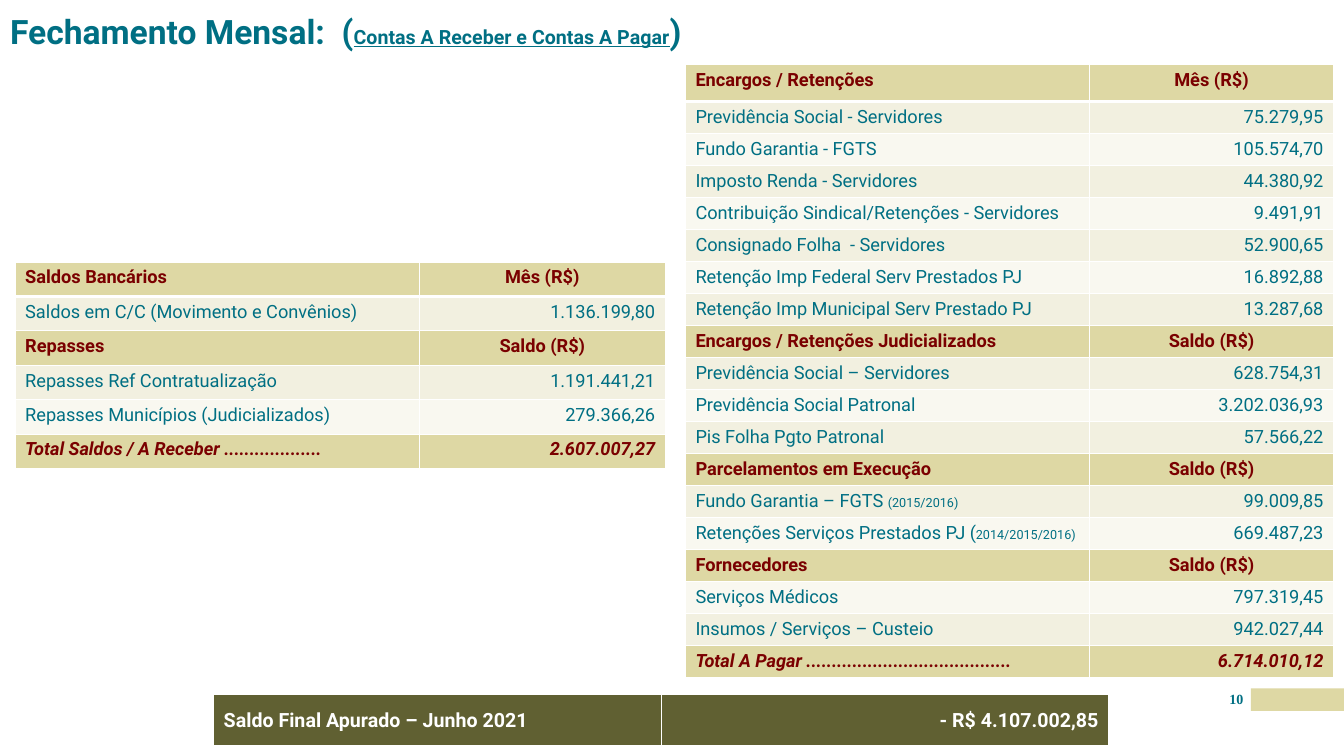
from lxml import etree
from pptx import Presentation
from pptx.dml.color import RGBColor
from pptx.enum.shapes import MSO_SHAPE
from pptx.enum.text import MSO_ANCHOR, PP_ALIGN
from pptx.oxml.ns import qn
from pptx.util import Pt

RECT = MSO_SHAPE.RECTANGLE
TOP, MIDDLE = MSO_ANCHOR.TOP, MSO_ANCHOR.MIDDLE
LEFT, CENTER, RIGHT = PP_ALIGN.LEFT, PP_ALIGN.CENTER, PP_ALIGN.RIGHT

COLORS = {
    "teal": "006F83", "maroon": "7A0000", "white": "FFFFFF", "sand": "DED8A4",
    "odd": "F2F0E0", "even": "F9F8F0", "olive": "606032",
}

RECEIVABLE = [
    ("head", "Saldos Bancários", "Mês (R$)"),
    ("item", "Saldos em C/C (Movimento e Convênios)", "1.136.199,80"),
    ("head", "Repasses", "Saldo (R$)"),
    ("item", "Repasses Ref Contratualização", "1.191.441,21"),
    ("item", "Repasses Municípios (Judicializados)", "279.366,26"),
    ("total", "Total Saldos / A Receber ...................", "2.607.007,27"),
]
PAYABLE = [
    ("head", "Encargos / Retenções", "Mês (R$)"),
    ("item", "Previdência Social - Servidores", "75.279,95"),
    ("item", "Fundo Garantia - FGTS", "105.574,70"),
    ("item", "Imposto Renda - Servidores", "44.380,92"),
    ("item", "Contribuição Sindical/Retenções - Servidores", "9.491,91"),
    ("item", "Consignado Folha  - Servidores", "52.900,65"),
    ("item", "Retenção Imp Federal Serv Prestados PJ", "16.892,88"),
    ("item", "Retenção Imp Municipal Serv Prestado PJ", "13.287,68"),
    ("head", "Encargos / Retenções Judicializados", "Saldo (R$)"),
    ("item", "Previdência Social – Servidores", "628.754,31"),
    ("item", "Previdência Social Patronal", "3.202.036,93"),
    ("item", "Pis Folha Pgto Patronal", "57.566,22"),
    ("head", "Parcelamentos em Execução", "Saldo (R$)"),
    ("item", ("Fundo Garantia – FGTS ", "(2015/2016)"), "99.009,85"),
    ("item", ("Retenções Serviços Prestados PJ (", "2014/2015/2016)"), "669.487,23"),
    ("head", "Fornecedores", "Saldo (R$)"),
    ("item", "Serviços Médicos", "797.319,45"),
    ("item", "Insumos / Serviços – Custeio", "942.027,44"),
    ("total", "Total A Pagar ........................................", "6.714.010,12"),
]
BALANCE = [("final", "Saldo Final Apurado – Junho 2021", "- R$ 4.107.002,85")]

STYLES = {
    "head": dict(color="maroon", bold=True),
    "item": dict(color="teal"),
    "total": dict(color="maroon", bold=True, italic=True),
    "final": dict(color="white", bold=True, size=14),
}
FILLS = {"head": "sand", "total": "sand", "final": "olive"}


def rgb(name):
    return RGBColor.from_string(COLORS[name])


def add_text(p, text, size=13, font="Roboto", color="teal", bold=False,
             italic=False, underline=False):
    r = p.add_run()
    r.text = text
    f = r.font
    f.size, f.name, f.bold, f.italic, f.underline = Pt(size), font, bold, italic, underline
    f.color.rgb = rgb(color)


def add_box(s, x, y, w, h):
    tf = s.shapes.add_textbox(Pt(x), Pt(y), Pt(w), Pt(h)).text_frame
    tf.word_wrap = True
    tf.margin_left = tf.margin_top = tf.margin_right = tf.margin_bottom = 0
    return tf.paragraphs[0]


def set_borders(cell, bottom):
    tcPr = cell._tc.get_or_add_tcPr()
    widths = {"a:lnL": 1, "a:lnR": 1, "a:lnT": 1, "a:lnB": bottom}
    for i, (tag, width) in enumerate(widths.items()):
        ln = etree.Element(qn(tag), w=str(Pt(width)))
        fill = etree.SubElement(ln, qn("a:solidFill"))
        etree.SubElement(fill, qn("a:srgbClr"), val=COLORS["white"])
        tcPr.insert(i, ln)


def add_ledger(s, x, y, widths, heights, rows, anchor=TOP):
    frame = s.shapes.add_table(len(rows), 2, Pt(x), Pt(y), Pt(sum(widths)), Pt(sum(heights)))
    table = frame.table
    for column, width in zip(table.columns, widths):
        column.width = Pt(width)
    for i, (kind, label, value) in enumerate(rows):
        table.rows[i].height = Pt(heights[i])
        fill = FILLS.get(kind, "odd" if i % 2 else "even")
        value_align = CENTER if kind == "head" else RIGHT
        for j, (content, align) in enumerate([(label, LEFT), (value, value_align)]):
            cell = table.cell(i, j)
            cell.fill.solid()
            cell.fill.fore_color.rgb = rgb(fill)
            cell.vertical_anchor = anchor
            set_borders(cell, 1 if i else 3)
            p = cell.text_frame.paragraphs[0]
            p.alignment = align
            main, note = (content, "") if isinstance(content, str) else content
            add_text(p, main, **STYLES[kind])
            if note:
                add_text(p, note, size=9)


def add_title(s, x, y, w, h):
    p = add_box(s, x, y, w, h)
    p.line_spacing = 0.9
    add_text(p, "Fechamento Mensal:  (", size=24, bold=True)
    add_text(p, "Contas A Receber e Contas A Pagar", size=14, bold=True, underline=True)
    add_text(p, ")", size=24, bold=True)


def add_page_mark(s, x, y, w, h):
    number_width = 21
    sp = s.shapes.add_shape(RECT, Pt(x + number_width), Pt(y), Pt(w - number_width), Pt(h))
    sp.shadow.inherit = False
    sp.fill.solid()
    sp.fill.fore_color.rgb = rgb("sand")
    sp.line.fill.background()
    p = add_box(s, x, y + 1.5, number_width, 18)
    p.alignment = CENTER
    add_text(p, "10", size=10, font="Times New Roman", bold=True)


def main():
    prs = Presentation()
    prs.slide_width, prs.slide_height = Pt(960), Pt(540)
    s = prs.slides.add_slide(prs.slide_layouts[6])
    add_page_mark(s, 872.6, 491.8, 87.4, 16)
    add_title(s, 7.2, 10.8, 936.7, 36)
    add_ledger(s, 489.6, 46.1, [288.7, 174.2], [26.4] + [22.6] * 18, PAYABLE)
    add_ledger(s, 10.8, 187.2, [288.7, 175.7], [24.6] * 6, RECEIVABLE)
    add_ledger(s, 152.6, 496.1, [319.7, 319.7], [37.4], BALANCE, anchor=MIDDLE)
    prs.save("out.pptx")


if __name__ == "__main__":
    main()
